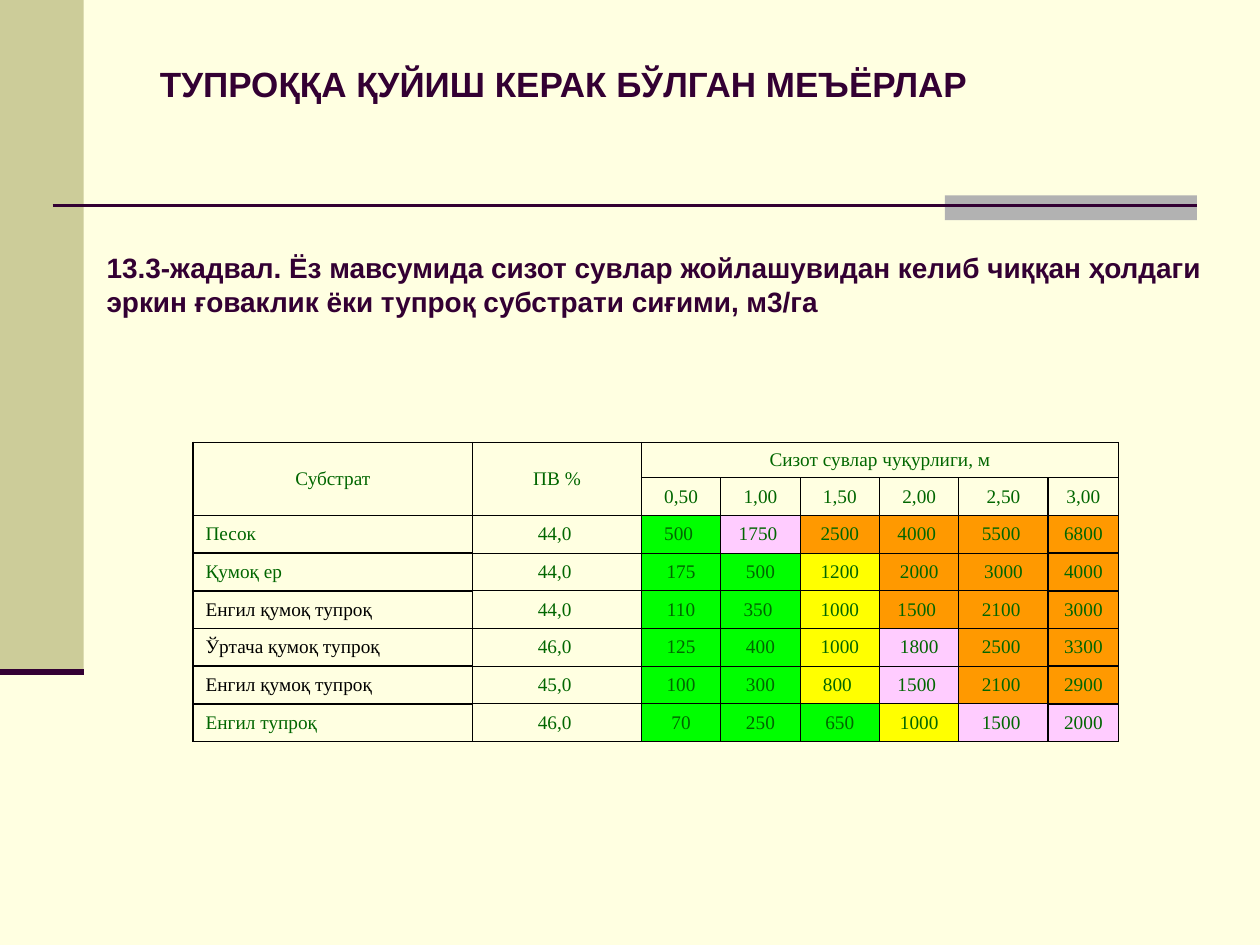
"""Build the slide on irrigation norms by soil substrate and groundwater depth."""
from lxml import etree
from pptx import Presentation
from pptx import util as u
from pptx.dml.color import RGBColor
from pptx.enum import shapes, text
from pptx.oxml import ns

CREAM = RGBColor(0xFF, 0xFF, 0xE1)
OLIVE = RGBColor(0xCC, 0xCC, 0x99)
GREY = RGBColor(0xB2, 0xB2, 0xB2)
PLUM = RGBColor(0x33, 0x00, 0x33)
BLACK = RGBColor(0x00, 0x00, 0x00)
DARK_GREEN = RGBColor(0x00, 0x66, 0x00)
FILLS = {
    "G": RGBColor(0x00, 0xFF, 0x00),
    "P": RGBColor(0xFF, 0xCC, 0xFF),
    "O": RGBColor(0xFF, 0x99, 0x00),
    "Y": RGBColor(0xFF, 0xFF, 0x00),
}


def style_font(font, name, size, color, bold=False):
    font.name = name
    font.size = u.Pt(size)
    font.bold = bold
    font.color.rgb = color


def add_borders(cell, width):
    properties = cell._tc.get_or_add_tcPr()
    for side in ("a:lnL", "a:lnR", "a:lnT", "a:lnB"):
        line = etree.SubElement(properties, ns.qn(side), w=str(u.Pt(width)))
        fill = etree.SubElement(line, ns.qn("a:solidFill"))
        etree.SubElement(fill, ns.qn("a:srgbClr"), val=str(BLACK))


presentation = Presentation()
presentation.slide_width = u.Cm(25.4)
presentation.slide_height = u.Cm(19.05)
slide = presentation.slides.add_slide(presentation.slide_layouts[5])
slide.background.fill.solid()
slide.background.fill.fore_color.rgb = CREAM

for left, top, width, height, color in (
    (0, 0, 1.69, 13.55, OLIVE),
    (19.05, 3.94, 5.08, 0.5, GREY),
):
    band = slide.shapes.add_shape(
        shapes.MSO_SHAPE.RECTANGLE, u.Cm(left), u.Cm(top), u.Cm(width), u.Cm(height))
    band.shadow.inherit = False
    band.fill.solid()
    band.fill.fore_color.rgb = color
    band.line.fill.background()

for start, end, height, weight in ((1.06, 24.13, 4.14, 1.5), (0, 1.69, 13.55, 3.5)):
    rule = slide.shapes.add_connector(
        shapes.MSO_CONNECTOR.STRAIGHT, u.Cm(start), u.Cm(height), u.Cm(end), u.Cm(height))
    rule.line.color.rgb = PLUM
    rule.line.width = u.Pt(weight)
    etree.SubElement(rule._element.spPr, ns.qn("a:effectLst"))

title = slide.shapes.title
title.left, title.top, title.width, title.height = u.Cm(2.97), u.Cm(1.12), u.Cm(19.25), u.Cm(1.14)
title.text_frame.text = "ТУПРОҚҚА ҚУЙИШ КЕРАК БЎЛГАН МЕЪЁРЛАР"
title.text_frame.vertical_anchor = text.MSO_ANCHOR.MIDDLE
title.text_frame.auto_size = text.MSO_AUTO_SIZE.NONE
paragraph = title.text_frame.paragraphs[0]
paragraph.alignment = text.PP_ALIGN.LEFT
style_font(paragraph.font, "Arial", 20, PLUM, True)

headings = ["Субстрат", "ПВ %", "Сизот сувлар чуқурлиги, м", "", "", "", "", ""]
depths = ["", "", "0,50", "1,00", "1,50", "2,00", "2,50", "3,00"]
soils = [
    ["Песок", "44,0 ", "500 ", "1750 ", "2500", "4000 ", "5500 ", "6800"],
    ["Қумоқ ер", "44,0 ", "175", "500", "1200", "2000", "3000", "4000"],
    ["Енгил қумоқ тупроқ", "44,0 ", "110", "350 ", "1000", "1500 ", "2100 ", "3000"],
    ["Ўртача қумоқ тупроқ", "46,0 ", "125", "400", "1000", "1800", "2500 ", "3300"],
    ["Енгил қумоқ тупроқ", "45,0 ", "100", "300", "800 ", "1500 ", "2100 ", "2900"],
    ["Енгил тупроқ", "46,0 ", "70", "250", "650", "1000", "1500 ", "2000"],
]
rows = [headings, depths] + soils
shading = ["-" * 8, "-" * 8, "--GPOOOO", "--GGYOOO", "--GGYOOO", "--GGYPOO", "--GGYPOO", "--GGGYPP"]
black_labels = (4, 5, 6)
column_widths = [5.64, 3.4, 1.6, 1.6, 1.6, 1.6, 1.8, 1.42]
row_heights = [0.71] + [0.76] * 7

table = slide.shapes.add_table(
    len(rows), len(column_widths), u.Cm(3.89), u.Cm(8.92),
    u.Cm(sum(column_widths)), u.Cm(sum(row_heights))).table
table.first_row = table.horz_banding = False
for column, width in zip(table.columns, column_widths):
    column.width = u.Cm(width)
for row, height in zip(table.rows, row_heights):
    row.height = u.Cm(height)

for row_index, (labels, codes) in enumerate(zip(rows, shading)):
    for column_index, (label, code) in enumerate(zip(labels, codes)):
        cell = table.cell(row_index, column_index)
        is_soil_name = column_index == 0 and row_index > 1
        cell.text = label
        cell.vertical_anchor = text.MSO_ANCHOR.MIDDLE
        add_borders(cell, 1 if column_index in (0, 7) else 0.75)
        if code in FILLS:
            cell.fill.solid()
            cell.fill.fore_color.rgb = FILLS[code]
        else:
            cell.fill.background()
        paragraph = cell.text_frame.paragraphs[0]
        paragraph.alignment = text.PP_ALIGN.LEFT if is_soil_name else text.PP_ALIGN.CENTER
        color = BLACK if is_soil_name and row_index in black_labels else DARK_GREEN
        style_font(paragraph.font, "Times New Roman", 11, color)

table.cell(0, 0).merge(table.cell(1, 0))
table.cell(0, 1).merge(table.cell(1, 1))
table.cell(0, 2).merge(table.cell(0, 7))

caption = slide.shapes.add_textbox(u.Cm(1.9), u.Cm(4.93), u.Cm(22.81), u.Cm(1.63))
caption.text_frame.word_wrap = True
caption.text_frame.text = (
    "13.3-жадвал. Ёз мавсумида сизот сувлар жойлашувидан келиб чиққан ҳолдаги "
    "эркин ғоваклик ёки тупроқ субстрати сиғими, м3/га")
style_font(caption.text_frame.paragraphs[0].font, "Arial", 16, PLUM, True)

presentation.save("out.pptx")
